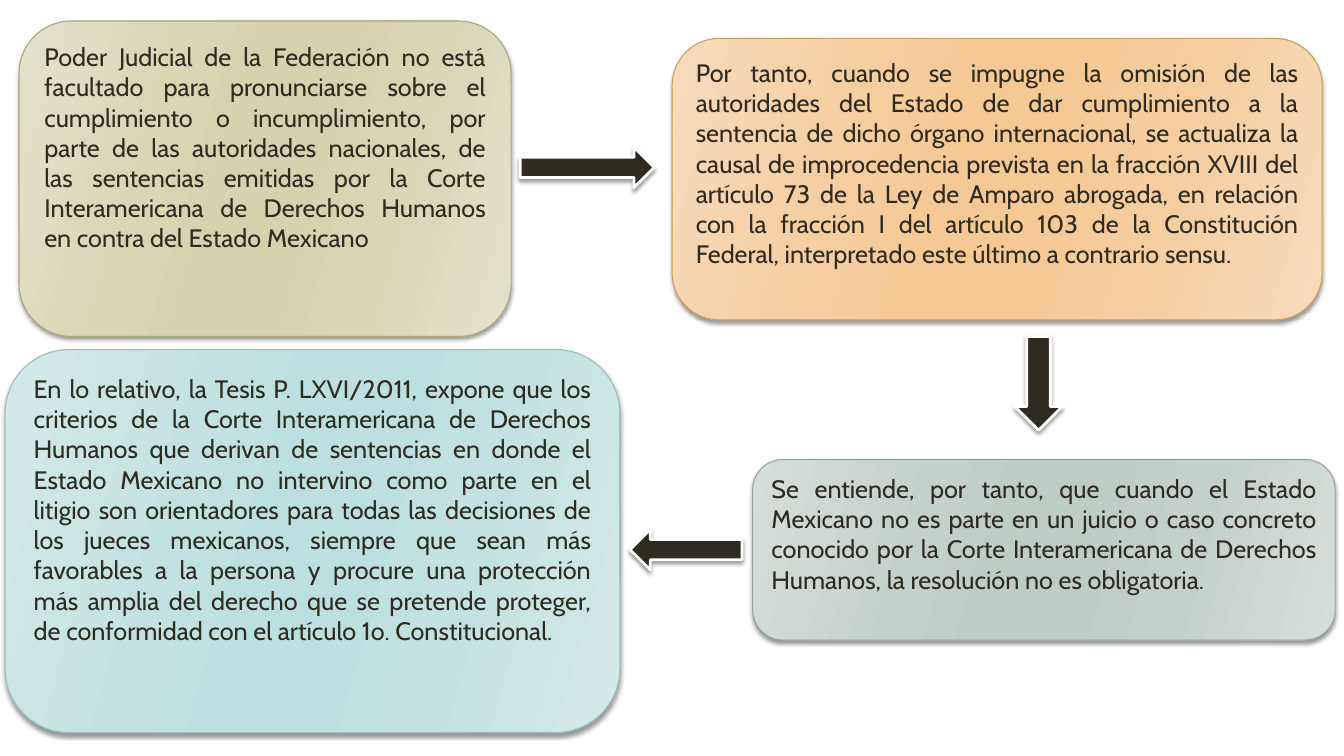
from dataclasses import dataclass

from lxml import etree
from pptx import Presentation
from pptx.dml.color import RGBColor
from pptx.enum.shapes import MSO_SHAPE
from pptx.enum.text import MSO_ANCHOR, PP_ALIGN
from pptx.oxml.ns import qn
from pptx.util import Cm, Pt

ROUND = MSO_SHAPE.ROUNDED_RECTANGLE
RIGHT, DOWN, LEFT = MSO_SHAPE.RIGHT_ARROW, MSO_SHAPE.DOWN_ARROW, MSO_SHAPE.LEFT_ARROW
TOP, JUSTIFY = MSO_ANCHOR.TOP, PP_ALIGN.JUSTIFY

FONT = "Cabin"
HEX = {"ink": "2F2B20", "white": "FFFFFF", "black": "000000"}
# Edge, middle and centre of each gradient, then the outline
TINTS = {
    "olive": ("E4E1CB", "D9D6B4", "D6D2AD", "A9A57C"),
    "orange": ("F7DBBD", "F5CD9F", "F5C994", "C89F5D"),
    "grey": ("D6DEDA", "C4D0CB", "BECCC6", "95A39D"),
    "teal": ("D4EAEA", "C2E2E1", "BCE0DF", "9CBEBD"),
}
# Gradient position in percent and the index of its tint
STOPS = ((0, 0), (30, 1), (45, 2), (55, 2), (73, 1), (100, 0))


@dataclass
class Box:
    left: float
    top: float
    width: float
    height: float
    tint: str
    text: str


@dataclass
class Arrow:
    kind: MSO_SHAPE
    left: float
    top: float
    width: float
    height: float


BOXES = [
    Box(0.48, 0.53, 12.4, 7.95, "olive",
        "Poder Judicial de la Federación no está facultado para pronunciarse sobre el "
        "cumplimiento o incumplimiento, por parte de las autoridades nacionales, de las "
        "sentencias emitidas por la Corte Interamericana de Derechos Humanos en contra "
        "del Estado Mexicano"),
    Box(16.94, 0.97, 16.38, 7.09, "orange",
        "Por tanto, cuando se impugne la omisión de las autoridades del Estado de dar "
        "cumplimiento a la sentencia de dicho órgano internacional, se actualiza la "
        "causal de improcedencia prevista en la fracción XVIII del artículo 73 de la Ley "
        "de Amparo abrogada, en relación con la fracción I del artículo 103 de la "
        "Constitución Federal, interpretado este último a contrario sensu."),
    Box(18.97, 11.58, 14.68, 4.55, "grey",
        "Se entiende, por tanto, que cuando el Estado Mexicano no es parte en un juicio "
        "o caso concreto conocido por la Corte Interamericana de Derechos Humanos, la "
        "resolución no es obligatoria."),
    Box(0.13, 8.81, 15.49, 9.65, "teal",
        "En lo relativo, la Tesis P. LXVI/2011, expone que los criterios de la Corte "
        "Interamericana de Derechos Humanos que derivan de sentencias en donde el Estado "
        "Mexicano no intervino como parte en el litigio son orientadores para todas las "
        "decisiones de los jueces mexicanos, siempre que sean más favorables a la "
        "persona y procure una protección más amplia del derecho que se pretende "
        "proteger, de conformidad con el artículo 1o. Constitucional."),
]
ARROWS = [
    Arrow(RIGHT, 13.11, 3.71, 3.38, 1.02),
    Arrow(DOWN, 25.58, 8.48, 1.19, 2.36),
    Arrow(LEFT, 15.88, 13.34, 2.82, 1.02),
]


def rgb(code: str) -> RGBColor:
    return RGBColor.from_string(code)


def add_node(parent, tag: str, **attrs):
    return etree.SubElement(parent, qn(tag), {k: str(v) for k, v in attrs.items()})


def add_form(slide, kind: MSO_SHAPE, item: Box | Arrow, line: str, weight: float):
    """Add an outlined shape with a soft shadow below it."""
    shape = slide.shapes.add_shape(
        kind, Cm(item.left), Cm(item.top), Cm(item.width), Cm(item.height))
    shape.line.color.rgb = rgb(line)
    shape.line.width = Pt(weight)
    shape.shadow.inherit = False
    effects = shape.element.spPr.find(qn("a:effectLst"))
    shade = add_node(effects, "a:outerShdw", blurRad=Pt(3), dist=Pt(2),
                     dir=90 * 60000, rotWithShape=0)
    color = add_node(shade, "a:srgbClr", val=HEX["black"])
    add_node(color, "a:alpha", val=40000)
    return shape


def add_box(slide, box: Box) -> None:
    tints = TINTS[box.tint]
    shape = add_form(slide, ROUND, box, tints[3], 0.75)

    # Slanted gradient
    shape.fill.gradient()
    shape.fill.gradient_angle = 344
    stops = shape.element.spPr.find(qn("a:gradFill")).find(qn("a:gsLst"))
    for old in list(stops):
        stops.remove(old)
    for place, index in STOPS:
        stop = add_node(stops, "a:gs", pos=place * 1000)
        add_node(stop, "a:srgbClr", val=tints[index])

    # Justified text
    frame = shape.text_frame
    frame.text = box.text
    frame.word_wrap = True
    frame.vertical_anchor = TOP
    para = frame.paragraphs[0]
    para.alignment = JUSTIFY
    font = para.runs[0].font
    font.name = FONT
    font.size = Pt(18)
    font.color.rgb = rgb(HEX["ink"])


def add_arrow(slide, arrow: Arrow) -> None:
    shape = add_form(slide, arrow.kind, arrow, HEX["white"], 2)
    shape.fill.solid()
    shape.fill.fore_color.rgb = rgb(HEX["ink"])


def main() -> None:
    deck = Presentation()
    deck.slide_width, deck.slide_height = Cm(33.87), Cm(19.05)
    slide = deck.slides.add_slide(deck.slide_layouts[6])
    for box in BOXES:
        add_box(slide, box)
    for arrow in ARROWS:
        add_arrow(slide, arrow)
    deck.save("out.pptx")


if __name__ == "__main__":
    main()
